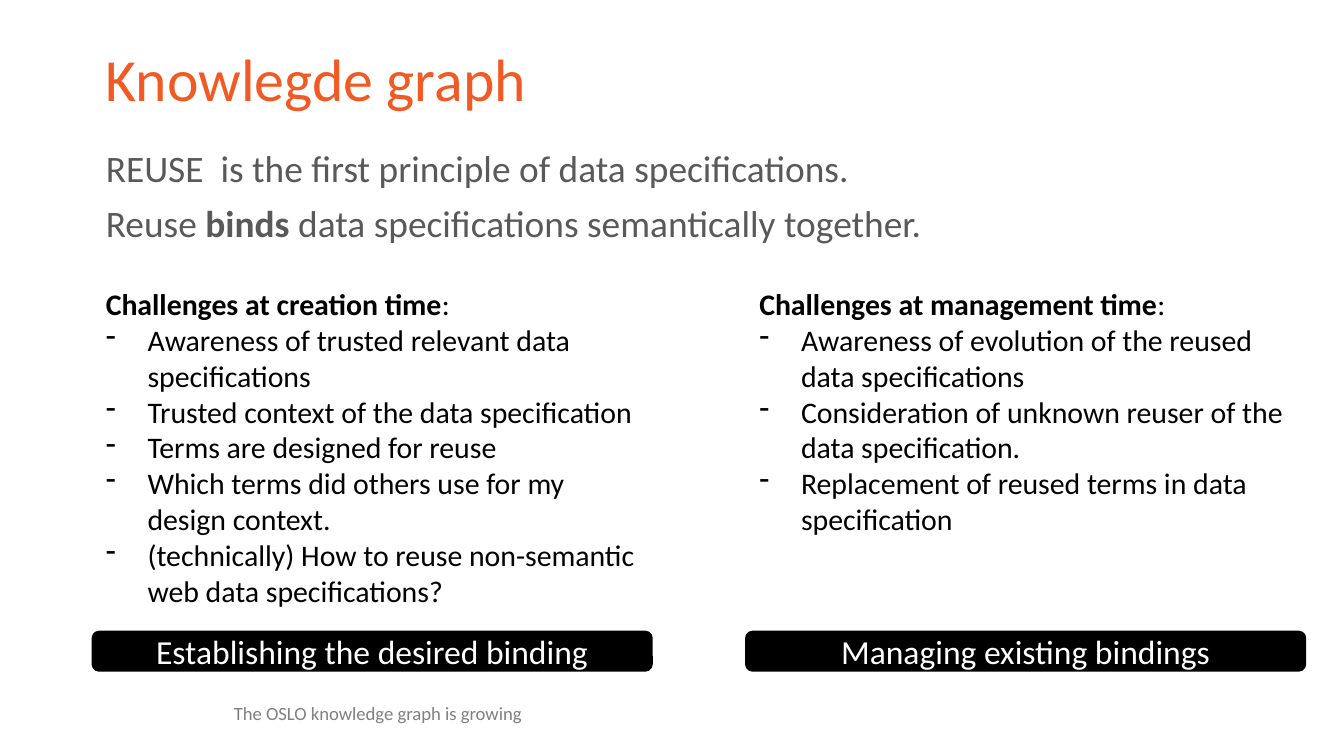
from dataclasses import dataclass

from lxml import etree
from pptx import Presentation
from pptx import util as u
from pptx.dml.color import RGBColor
from pptx.enum import shapes, text
from pptx.oxml.ns import qn


@dataclass(frozen=True)
class Theme:
    font: str = "Calibri"
    title_color: str = "F15A24"
    lead_color: str = "595959"
    footer_color: str = "808080"
    ink: str = "000000"
    paper: str = "FFFFFF"
    title_size: int = 32
    lead_size: int = 20
    bar_size: int = 18
    list_size: int = 16
    footer_size: int = 10


def apply(target, values):
    for attribute, value in values.items():
        setattr(target, attribute, value)


class SlideBuilder:
    HANG = u.Cm(0.79)

    def __init__(self, slide, theme):
        self.slide = slide
        self.theme = theme

    def fill_paragraph(self, paragraph, runs, size, color, **layout):
        """Fill a paragraph with (wording, bold) runs."""
        apply(paragraph, layout)
        for wording, bold in runs:
            run = paragraph.add_run()
            run.text = wording
            apply(run.font, {"name": self.theme.font, "size": u.Pt(size), "bold": bold})
            run.font.color.rgb = RGBColor.from_string(color)

    def dash(self, paragraph):
        properties = paragraph._p.get_or_add_pPr()
        properties.set("marL", str(self.HANG))
        properties.set("indent", str(-self.HANG))
        etree.SubElement(properties, qn("a:buChar")).set("char", "-")

    def add_text(self, box, lines, size, color, gap=0, dashed=False, line_spacing=1.0,
                 **frame_format):
        """Add a text box; with dashed, every line after the first is a list item."""
        frame = self.slide.shapes.add_textbox(*map(u.Cm, box)).text_frame
        apply(frame, {"word_wrap": True, **frame_format})
        for index, runs in enumerate(lines):
            paragraph = frame.add_paragraph() if index else frame.paragraphs[0]
            if dashed and index:
                self.dash(paragraph)
            self.fill_paragraph(paragraph, runs, size, color, line_spacing=line_spacing,
                                space_before=u.Pt(gap if index else 0))

    def add_bar(self, box, wording):
        theme = self.theme
        bar = self.slide.shapes.add_shape(
            shapes.MSO_SHAPE.ROUNDED_RECTANGLE, *map(u.Cm, box))
        bar.shadow.inherit = False
        for paint in (bar.fill, bar.line.fill):
            paint.solid()
            paint.fore_color.rgb = RGBColor.from_string(theme.ink)
        bar.line.width = u.Pt(1)
        apply(bar.text_frame, {"word_wrap": True, "vertical_anchor": text.MSO_ANCHOR.MIDDLE})
        self.fill_paragraph(bar.text_frame.paragraphs[0], [(wording, False)], theme.bar_size,
                            theme.paper, alignment=text.PP_ALIGN.CENTER)

    def add_challenges(self, left, height, heading, items, conclusion):
        """Add one column: heading, dashed list and concluding bar."""
        width = 10.57
        lines = [[(heading, True), (":", False)]] + [[(item, False)] for item in items]
        self.add_text((left, 5.28, width, height), lines, self.theme.list_size,
                      self.theme.ink, dashed=True)
        self.add_bar((left, 11.94, width, 0.74), conclusion)


def main():
    theme = Theme()
    deck = Presentation()
    apply(deck, {"slide_width": u.Cm(25.4), "slide_height": u.Cm(14.29)})
    builder = SlideBuilder(deck.slides.add_slide(deck.slide_layouts[6]), theme)
    margin, full_width = 1.75, 21.9

    builder.add_text((margin, 0.76, full_width, 1.6), [[("Knowlegde graph", False)]],
                     theme.title_size, theme.title_color, line_spacing=0.9,
                     vertical_anchor=text.MSO_ANCHOR.MIDDLE)
    builder.add_text((margin, 2.79, full_width, 2.11), [
        [("REUSE  is the first principle of data specifications.", False)],
        [("Reuse ", False), ("binds", True),
         (" data specifications semantically together.", False)],
    ], theme.lead_size, theme.lead_color, gap=10, line_spacing=0.8)

    builder.add_challenges(margin, 6.4, "Challenges at creation time", [
        "Awareness of trusted relevant data specifications",
        "Trusted context of the data specification",
        "Terms are designed for reuse",
        "Which terms did others use for my design context.",
        "(technically) How to reuse non-semantic web data specifications?",
    ], "Establishing the desired binding")
    builder.add_challenges(14.1, 5.82, "Challenges at management time", [
        "Awareness of evolution of the reused data specifications",
        "Consideration of unknown reuser of the data specification.",
        "Replacement of reused terms in data specification",
    ], "Managing existing bindings")

    insets = dict.fromkeys(
        ("margin_left", "margin_top", "margin_right", "margin_bottom"), 0)
    builder.add_text((4.42, 13.23, 7.7, 0.46),
                     [[("The OSLO knowledge graph is growing", False)]],
                     theme.footer_size, theme.footer_color, line_spacing=0.9,
                     vertical_anchor=text.MSO_ANCHOR.BOTTOM, **insets)
    deck.save("out.pptx")


if __name__ == "__main__":
    main()
